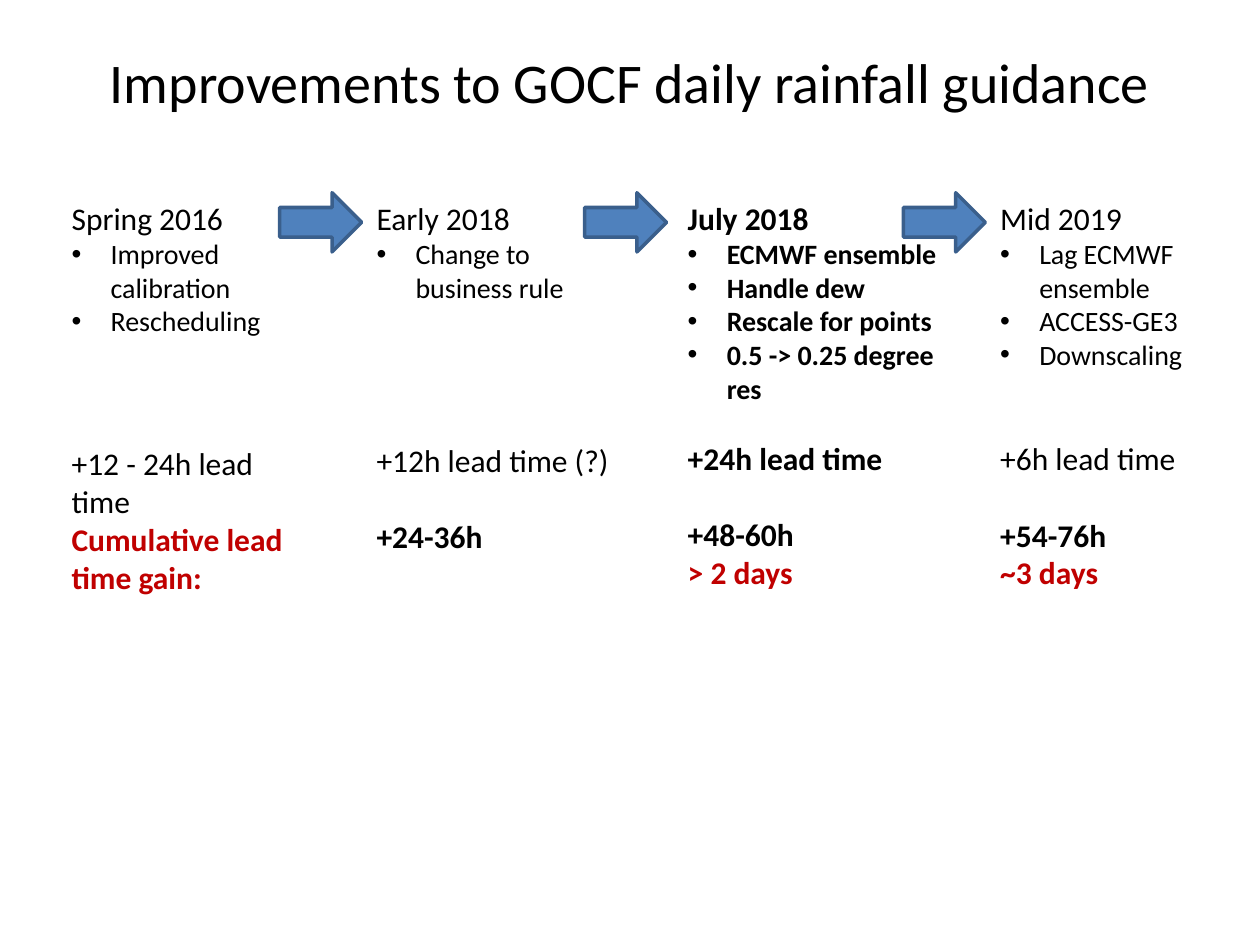
from dataclasses import dataclass

from lxml import etree
from pptx import Presentation
from pptx.dml.color import RGBColor
from pptx.enum.shapes import MSO_SHAPE
from pptx.enum.text import MSO_ANCHOR, PP_ALIGN
from pptx.oxml.ns import qn
from pptx.util import Inches, Pt

RIGHT_ARROW = MSO_SHAPE.RIGHT_ARROW
MIDDLE = MSO_ANCHOR.MIDDLE
CENTER = PP_ALIGN.CENTER
LEFT = PP_ALIGN.LEFT


@dataclass(frozen=True)
class Theme:
    font: str = "Calibri"
    title_size: int = 32
    body_size: int = 18
    bullet_size: int = 16
    line_ratio: float = 1.22
    text: RGBColor = RGBColor(0, 0, 0)
    highlight: RGBColor = RGBColor(0xC0, 0, 0)
    arrow_fill: RGBColor = RGBColor(0x4F, 0x81, 0xBD)
    arrow_line: RGBColor = RGBColor(0x3A, 0x5F, 0x8C)


@dataclass(frozen=True)
class Stage:
    left: float
    width: float
    height: float
    date: str
    changes: tuple
    lead_time: str
    lead_gap: float  # points between the changes and the lead time
    total: str = ""
    days: str = ""
    current: bool = False


THEME = Theme()
BULLET_LINE = THEME.bullet_size * THEME.line_ratio
BODY_LINE = THEME.body_size * THEME.line_ratio
STAGE_TOP = 1.53
BULLET_INDENT = 0.31
CUMULATIVE_LABEL = "Cumulative lead time gain:"

STAGES = (
    Stage(0.47, 2.13, 3.26, "Spring 2016",
          ("Improved calibration", "Rescheduling"),
          "+12 - 24h lead time", 2 * BULLET_LINE + BODY_LINE),
    Stage(2.89, 2.13, 2.93, "Early 2018", ("Change to business rule",),
          "+12h lead time (?)", 4 * BULLET_LINE, "+24-36h"),
    Stage(5.36, 2.21, 3.23, "July 2018",
          ("ECMWF ensemble", "Handle dew", "Rescale for points",
           "0.5 -> 0.25 degree res"),
          "+24h lead time", BULLET_LINE, "+48-60h", "> 2 days", current=True),
    Stage(7.84, 2.13, 3.23, "Mid 2019",
          ("Lag ECMWF ensemble", "ACCESS-GE3", "Downscaling"),
          "+6h lead time", 2 * BULLET_LINE, "+54-76h", "~3 days"),
)
ARROW_LEFTS = (2.22, 4.64, 7.17)


def add_frame(slide, left, top, width, height):
    box = slide.shapes.add_textbox(
        Inches(left), Inches(top), Inches(width), Inches(height))
    box.text_frame.word_wrap = True
    return box.text_frame


def set_bullet(paragraph):
    properties = paragraph._p.get_or_add_pPr()
    properties.set("marL", str(Inches(BULLET_INDENT)))
    properties.set("indent", str(-Inches(BULLET_INDENT)))
    etree.SubElement(properties, qn("a:buFont"), typeface="Arial")
    etree.SubElement(properties, qn("a:buChar"), char="•")


def add_text(frame, text, size=THEME.body_size, color=THEME.text, bold=False,
             align=LEFT, bullet=False, space_before=0):
    """Write into the empty first paragraph, or append a new one."""
    first = frame.paragraphs[0]
    paragraph = frame.add_paragraph() if first.runs else first
    if bullet:
        set_bullet(paragraph)
    paragraph.alignment = align
    if space_before:
        paragraph.space_before = Pt(round(space_before, 1))
    run = paragraph.add_run()
    run.text = text
    run.font.name = THEME.font
    run.font.size = Pt(size)
    run.font.bold = bold
    run.font.color.rgb = color


def add_title(slide, text):
    frame = add_frame(slide, 0.5, 0.3, 9, 0.69)
    frame.vertical_anchor = MIDDLE
    add_text(frame, text, size=THEME.title_size, align=CENTER)


def add_stage(slide, stage):
    frame = add_frame(slide, stage.left, STAGE_TOP, stage.width, stage.height)
    add_text(frame, stage.date, bold=stage.current)
    for change in stage.changes:
        add_text(frame, change, size=THEME.bullet_size, bold=stage.current,
                 bullet=True)
    add_text(frame, stage.lead_time, bold=stage.current,
             space_before=stage.lead_gap)
    if stage.total:
        add_text(frame, stage.total, bold=True, space_before=BODY_LINE)
    else:
        add_text(frame, CUMULATIVE_LABEL, color=THEME.highlight, bold=True)
    if stage.days:
        add_text(frame, stage.days, color=THEME.highlight, bold=True)


def add_arrow(slide, left):
    arrow = slide.shapes.add_shape(
        RIGHT_ARROW, Inches(left), Inches(STAGE_TOP), Inches(0.65), Inches(0.47))
    arrow.shadow.inherit = False
    arrow.fill.solid()
    arrow.fill.fore_color.rgb = THEME.arrow_fill
    arrow.line.color.rgb = THEME.arrow_line
    arrow.line.width = Pt(2)


def main():
    presentation = Presentation()
    presentation.slide_width = Inches(10)
    presentation.slide_height = Inches(7.5)
    slide = presentation.slides.add_slide(presentation.slide_layouts[6])
    add_title(slide, "Improvements to GOCF daily rainfall guidance")
    for stage in STAGES:
        add_stage(slide, stage)
    for left in ARROW_LEFTS:
        add_arrow(slide, left)
    presentation.save("out.pptx")


if __name__ == "__main__":
    main()
